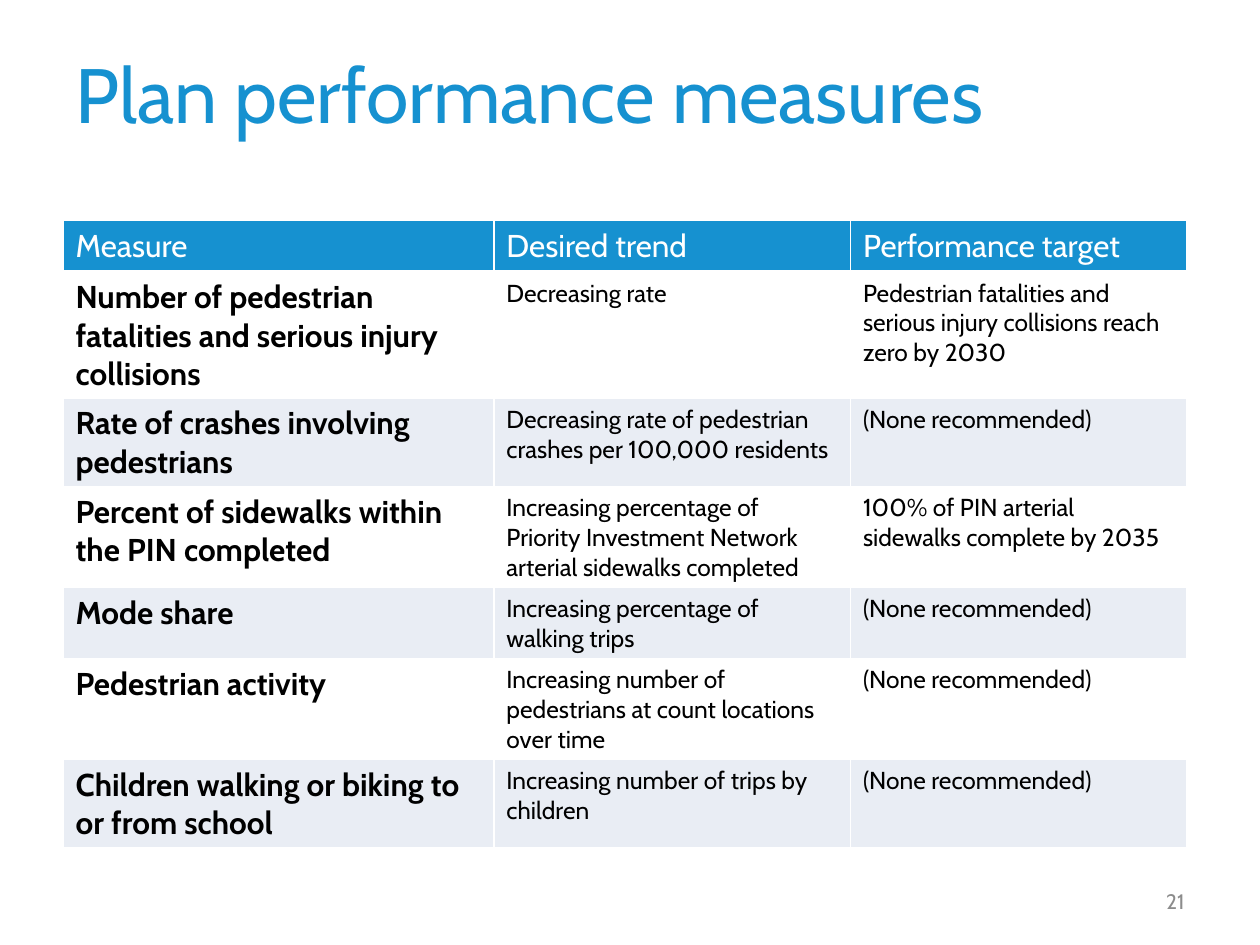
from lxml.etree import SubElement
from pptx import Presentation
from pptx.dml.color import RGBColor
from pptx.enum.text import MSO_ANCHOR as Anchor, PP_ALIGN as Align
from pptx.oxml.ns import qn
from pptx.util import Inches, Pt

FONT = "Cabin"
BLUE = RGBColor(0x16, 0x91, 0xD0)
BAND = RGBColor(0xE9, 0xED, 0xF4)
WHITE = RGBColor(0xFF, 0xFF, 0xFF)
BLACK = RGBColor(0, 0, 0)
GRAY = RGBColor(0x8C, 0x8C, 0x8C)

TITLE = "Plan performance measures"
PAGE_NUMBER = "21"
NO_TARGET = "(None recommended)"
HEADER = ("Measure", "Desired trend", "Performance target")
MEASURES = [
    ("Number of pedestrian fatalities and serious injury collisions",
     "Decreasing rate",
     "Pedestrian fatalities and serious injury collisions reach zero by 2030"),
    ("Rate of crashes involving pedestrians",
     "Decreasing rate of pedestrian crashes per 100,000 residents", NO_TARGET),
    ("Percent of sidewalks within the PIN completed",
     "Increasing percentage of Priority Investment Network arterial sidewalks completed",
     "100% of PIN arterial sidewalks complete by 2035"),
    ("Mode share", "Increasing percentage of walking trips", NO_TARGET),
    ("Pedestrian activity",
     "Increasing number of pedestrians at count locations over time", NO_TARGET),
    ("Children walking or biking to or from school",
     "Increasing number of trips by children", NO_TARGET),
]
COLUMN_WIDTHS = (3.42, 2.83, 2.67)
ROW_HEIGHT = 0.41


def add_span(frame, text, size, color, bold=False, align=Align.LEFT):
    para = frame.paragraphs[0]
    para.alignment = align
    span = para.add_run()
    span.text = text
    span.font.name = FONT
    span.font.size = Pt(size)
    span.font.bold = bold
    span.font.color.rgb = color


def add_label(page, place, text, size, color, align=Align.LEFT):
    box = page.shapes.add_textbox(*(Inches(value) for value in place))
    box.text_frame.word_wrap = True
    box.text_frame.vertical_anchor = Anchor.MIDDLE
    add_span(box.text_frame, text, size, color, align=align)


def add_borders(cell, widths):
    properties = cell._tc.get_or_add_tcPr()
    for side, width in widths.items():
        line = SubElement(properties, qn(f"a:ln{side}"), w=str(Pt(width)))
        fill = SubElement(line, qn("a:solidFill"))
        SubElement(fill, qn("a:srgbClr"), val=str(WHITE))


def fill_cell(cell, row, column, text):
    is_header = row == 0
    is_measure = column == 0
    add_borders(cell, {"L": 1, "R": 1, "T": 3 if row == 1 else 1,
                       "B": 3 if is_header else 1})
    if is_header or row % 2 == 0:
        cell.fill.solid()
        cell.fill.fore_color.rgb = BLUE if is_header else BAND
    else:
        cell.fill.background()
    add_span(cell.text_frame, text, 18 if is_header or is_measure else 14,
             WHITE if is_header else BLACK, bold=is_measure and not is_header)


def add_measures_table(page):
    rows = [HEADER, *MEASURES]
    table = page.shapes.add_table(
        len(rows), len(HEADER), Inches(0.5), Inches(1.75),
        Inches(sum(COLUMN_WIDTHS)), Inches(ROW_HEIGHT * len(rows))).table
    for column, width in zip(table.columns, COLUMN_WIDTHS):
        column.width = Inches(width)
    for row, texts in enumerate(rows):
        table.rows[row].height = Inches(ROW_HEIGHT)
        for column, text in enumerate(texts):
            fill_cell(table.cell(row, column), row, column, text)


def main():
    deck = Presentation()
    deck.slide_width, deck.slide_height = Inches(10), Inches(7.5)
    page = deck.slides.add_slide(deck.slide_layouts[6])
    add_label(page, (0.5, 0.3, 9, 0.87), TITLE, 44, BLUE)
    add_measures_table(page)
    add_label(page, (7.17, 6.95, 2.33, 0.4), PAGE_NUMBER, 12, GRAY, Align.RIGHT)
    deck.save("out.pptx")


if __name__ == "__main__":
    main()
